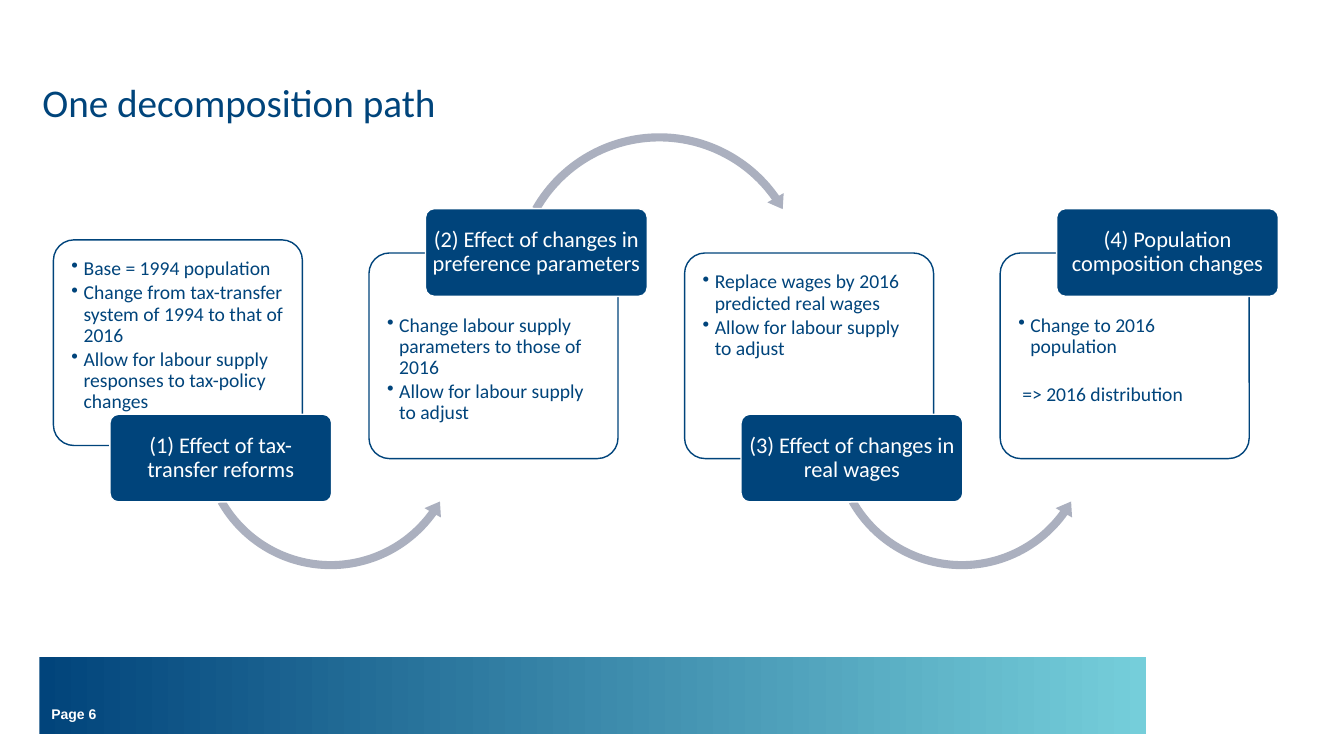
from pptx import Presentation
from pptx import util as u
from pptx.dml.color import RGBColor
from pptx.enum import shapes, text
from pptx.oxml.ns import qn
from lxml import etree

NAVY = RGBColor(0x00, 0x44, 0x7B)
BAND_START = RGBColor(0x01, 0x44, 0x7B)
BAND_END = RGBColor(0x75, 0xCE, 0xDA)
GREY = RGBColor(0xAB, 0xB0, 0xBF)
WHITE = RGBColor(0xFF, 0xFF, 0xFF)

KIND = shapes.MSO_SHAPE
LEFT, PITCH = 0.53, 3.13
HIGH, LOW = 2.07, 4.11  # tops of the step labels
RESULT = "=> 2016 distribution"

STEPS = [
    ("(1) Effect of tax-transfer reforms",
     ["Base = 1994 population",
      "Change from tax-transfer system of 1994 to that of 2016",
      "Allow for labour supply responses to tax-policy changes"]),
    ("(2) Effect of changes in preference parameters",
     ["Change labour supply parameters to those of 2016",
      "Allow for labour supply to adjust"]),
    ("(3) Effect of changes in real wages",
     ["Replace wages by 2016 predicted real wages",
      "Allow for labour supply to adjust"]),
    ("(4) Population composition changes",
     ["Change to 2016 population", RESULT]),
]


def apply(target, values):
    """Set each attribute named in values on target."""
    for name, value in values.items():
        setattr(target, name, value)


class DecompositionSlide:
    def __init__(self, presentation):
        self.slide = presentation.slides.add_slide(presentation.slide_layouts[5])
        self.font = "Calibri"

    def frame(self, shape, anchor, horizontal=0, top=0, bottom=0):
        frame = shape.text_frame
        apply(frame, {
            "word_wrap": True, "auto_size": text.MSO_AUTO_SIZE.NONE,
            "vertical_anchor": anchor,
            "margin_left": u.Inches(horizontal), "margin_right": u.Inches(horizontal),
            "margin_top": u.Inches(top), "margin_bottom": u.Inches(bottom)})
        return frame

    def fill_paragraph(self, paragraph, words, size, color,
                       align=text.PP_ALIGN.LEFT, **font):
        paragraph.text = words
        apply(paragraph, {"alignment": align, "line_spacing": 0.9})
        apply(paragraph.font, {"name": self.font, "size": u.Pt(size), **font})
        paragraph.font.color.rgb = color

    def shape(self, kind, box, fill=None, line=None, adjustments=()):
        shape = self.slide.shapes.add_shape(kind, *map(u.Inches, box))
        shape.shadow.inherit = False
        if fill is not None:
            shape.fill.solid()
            shape.fill.fore_color.rgb = fill
        if line is None:
            shape.line.fill.background()
        else:
            shape.line.color.rgb = line
            shape.line.width = u.Pt(1)
        for index, value in enumerate(adjustments):
            shape.adjustments[index] = value
        return shape

    def title(self, words):
        title = self.slide.shapes.title
        apply(title, {"left": u.Inches(0.32), "top": u.Inches(0.79),
                      "width": u.Inches(9.29), "height": u.Inches(0.49)})
        frame = self.frame(title, text.MSO_ANCHOR.MIDDLE, 0.1, 0.05, 0.05)
        self.fill_paragraph(frame.paragraphs[0], words, 28, NAVY)

    def footer(self, words):
        band = self.shape(KIND.RECTANGLE, (0.39, 6.52, 10.98, 0.76))
        band.fill.gradient()
        band.fill.gradient_angle = 0
        for stop, color in zip(band.fill.gradient_stops, (BAND_START, BAND_END)):
            stop.color.rgb = color
        box = self.slide.shapes.add_textbox(*map(u.Inches, (0.51, 6.97, 0.92, 0.25)))
        frame = self.frame(box, text.MSO_ANCHOR.MIDDLE)
        self.fill_paragraph(frame.paragraphs[0], words, 10, WHITE,
                            name="Arial", bold=True)

    def panel(self, left, top, text_top, lines):
        panel = self.shape(KIND.ROUNDED_RECTANGLE, (left, top, 2.47, 2.04),
                           WHITE, NAVY, [0.1])
        color = panel._element.spPr.find(qn("a:solidFill"))[0]
        etree.SubElement(color, qn("a:alpha"), val="90000")
        frame = self.frame(panel, text.MSO_ANCHOR.TOP, 0.12, text_top)
        for index, words in enumerate(lines):
            paragraph = frame.add_paragraph() if index else frame.paragraphs[0]
            paragraph.space_after = u.Pt(2)
            properties = paragraph._p.get_or_add_pPr()
            if words == RESULT:
                properties.set("marL", str(u.Inches(0.04)))
                paragraph.space_before = u.Pt(17)
            else:
                properties.set("marL", str(u.Inches(0.12)))
                properties.set("indent", str(u.Inches(-0.12)))
                etree.SubElement(properties, qn("a:buChar"), char="•")
            self.fill_paragraph(paragraph, words, 14, NAVY)

    def label(self, left, top, words):
        label = self.shape(KIND.ROUNDED_RECTANGLE, (left, top, 2.2, 0.87),
                           NAVY, WHITE, [0.1])
        frame = self.frame(label, text.MSO_ANCHOR.MIDDLE, 0.03, 0.02, 0.02)
        self.fill_paragraph(frame.paragraphs[0], words, 16, WHITE,
                            text.PP_ALIGN.CENTER)

    def arrow_below(self, left):
        self.shape(KIND.LEFT_CIRCULAR_ARROW, (left, 3.02, 2.68, 2.68), GREY,
                   adjustments=(0.03, 3.677, 21.432, 90.245, 0.035))

    def arrow_above(self, left):
        self.shape(KIND.CIRCULAR_ARROW, (left, 1.27, 3, 3), GREY,
                   adjustments=(0.027, 3.266, 194.979, 125.755, 0.031))


def main():
    presentation = Presentation()
    presentation.slide_width = u.Inches(13.33)
    presentation.slide_height = u.Inches(7.5)
    page = DecompositionSlide(presentation)
    page.footer("Page 6")
    page.title("One decomposition path")
    for index, (name, lines) in enumerate(STEPS):
        left = LEFT + index * PITCH
        label_above = index % 2 == 1
        page.panel(left, 2.51 if index else 2.38, 0.56 if label_above else 0.13, lines)
        if index < len(STEPS) - 1:
            if label_above:
                page.arrow_above(left + 1.38)
            else:
                page.arrow_below(left + 1.41)
        page.label(left + 0.56, HIGH if label_above else LOW, name)
    presentation.save("out.pptx")


if __name__ == "__main__":
    main()
